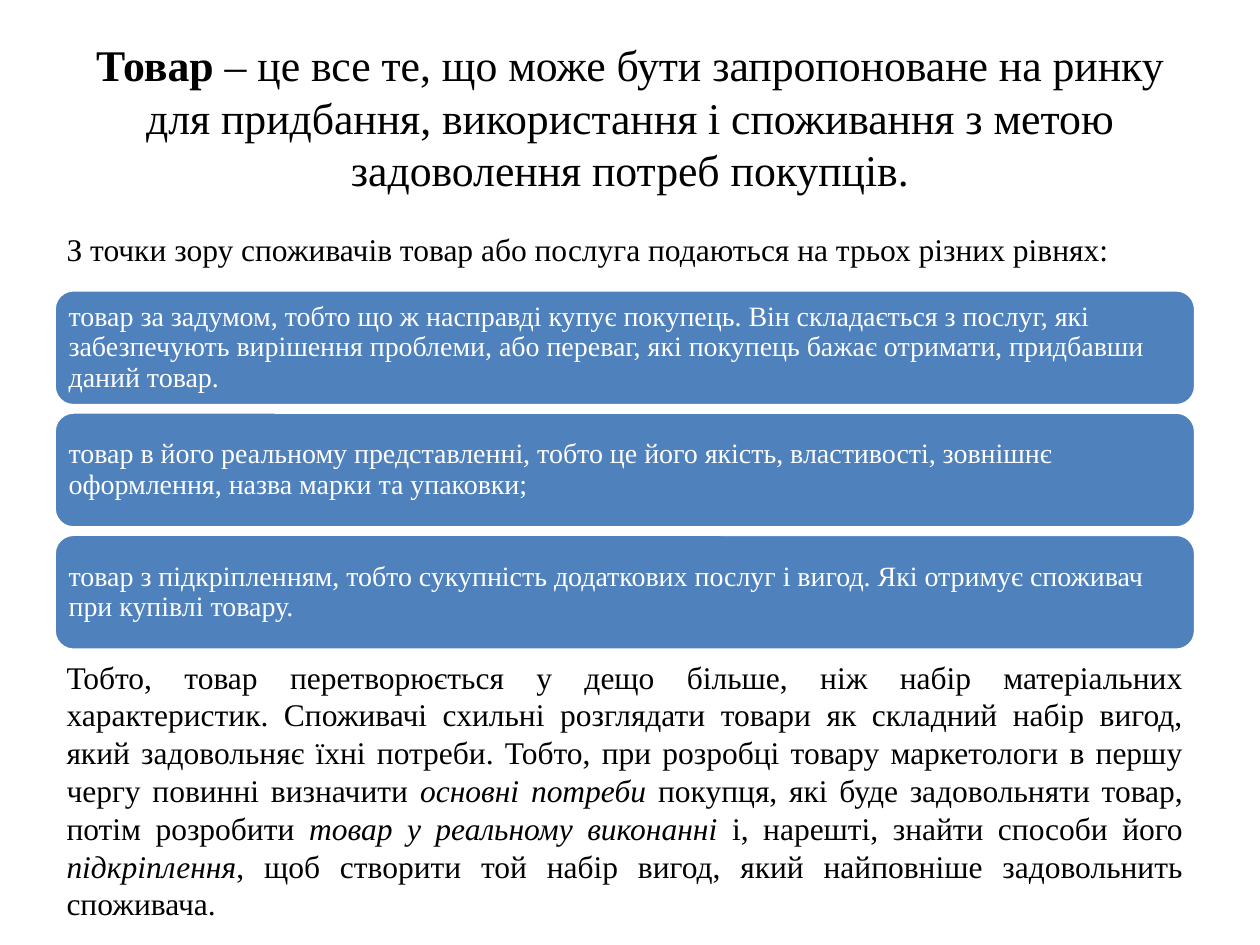
from pptx import Presentation
from pptx.dml.color import RGBColor
from pptx.enum.shapes import MSO_SHAPE
from pptx.enum.text import MSO_ANCHOR, PP_ALIGN
from pptx.util import Inches, Pt

COLORS = {"text": "000000", "level": "4F81BD", "white": "FFFFFF"}
FONT = "Times New Roman"
LEFT, WIDTH = 0.43, 9.06


def write(tf, runs, size, color, align):
    """Fill a frame with one paragraph of (text, style) runs."""
    tf.word_wrap = True
    p = tf.paragraphs[0]
    p.alignment = align
    p.font.name, p.font.size = FONT, Pt(size)
    p.font.color.rgb = RGBColor.from_string(COLORS[color])
    for text, style in runs:
        r = p.add_run()
        r.text = text
        if style:
            setattr(r.font, style, True)
    return p


def add_text(top, height, runs, size, align, left=LEFT, width=WIDTH):
    box = s.shapes.add_textbox(Inches(left), Inches(top), Inches(width), Inches(height))
    write(box.text_frame, runs, size, "text", align)
    return box.text_frame


prs = Presentation()
prs.slide_width, prs.slide_height = Inches(10), Inches(7.5)
s = prs.slides.add_slide(prs.slide_layouts[6])

# Title: definition
tf = add_text(0.3, 1.25, [
    ("Товар ", "bold"),
    ("– це все те, що може бути запропоноване на ринку для придбання, "
     "використання і споживання з метою задоволення потреб покупців.", None),
], 25, PP_ALIGN.CENTER, left=0.5, width=9)
tf.vertical_anchor = MSO_ANCHOR.MIDDLE

# Lead-in
add_text(1.78, 0.4, [
    ("З точки зору споживачів товар або послуга подаються на трьох різних рівнях:", None),
], 18, PP_ALIGN.LEFT)

# Three product levels
levels = [
    "товар за задумом, тобто що ж насправді купує покупець. Він складається з послуг, "
    "які забезпечують вирішення проблеми, або переваг, які покупець бажає отримати, "
    "придбавши даний товар.",
    "товар в його реальному представленні, тобто це його якість, властивості, "
    "зовнішнє оформлення, назва марки та упаковки;",
    "товар з підкріпленням, тобто сукупність додаткових послуг і вигод. "
    "Які отримує споживач при купівлі товару.",
]
for i, level in enumerate(levels):
    sp = s.shapes.add_shape(MSO_SHAPE.ROUNDED_RECTANGLE, Inches(LEFT), Inches(2.3 + 0.97 * i),
                            Inches(WIDTH), Inches(0.92))
    sp.shadow.inherit = False
    sp.fill.solid()
    sp.fill.fore_color.rgb = RGBColor.from_string(COLORS["level"])
    sp.line.color.rgb = RGBColor.from_string(COLORS["white"])
    sp.line.width = Pt(2)
    tf = sp.text_frame
    tf.margin_left = tf.margin_right = tf.margin_top = tf.margin_bottom = Inches(0.07)
    tf.vertical_anchor = MSO_ANCHOR.MIDDLE
    p = write(tf, [(level, None)], 16, "white", PP_ALIGN.LEFT)
    p.line_spacing = 0.9

# Conclusion
add_text(5.17, 2.22, [
    ("Тобто, товар перетворюється у дещо більше, ніж набір матеріальних характеристик. "
     "Споживачі схильні розглядати товари як складний набір вигод, який задовольняє "
     "їхні потреби. Тобто, при розробці товару маркетологи в першу чергу повинні "
     "визначити ", None),
    ("основні потреби ", "italic"),
    ("покупця, які буде задовольняти товар, потім розробити ", None),
    ("товар у реальному виконанні ", "italic"),
    ("і, нарешті, знайти способи його ", None),
    ("підкріплення", "italic"),
    (", щоб створити той набір вигод, який найповніше задовольнить споживача.", None),
], 18, PP_ALIGN.JUSTIFY)

prs.save("out.pptx")
